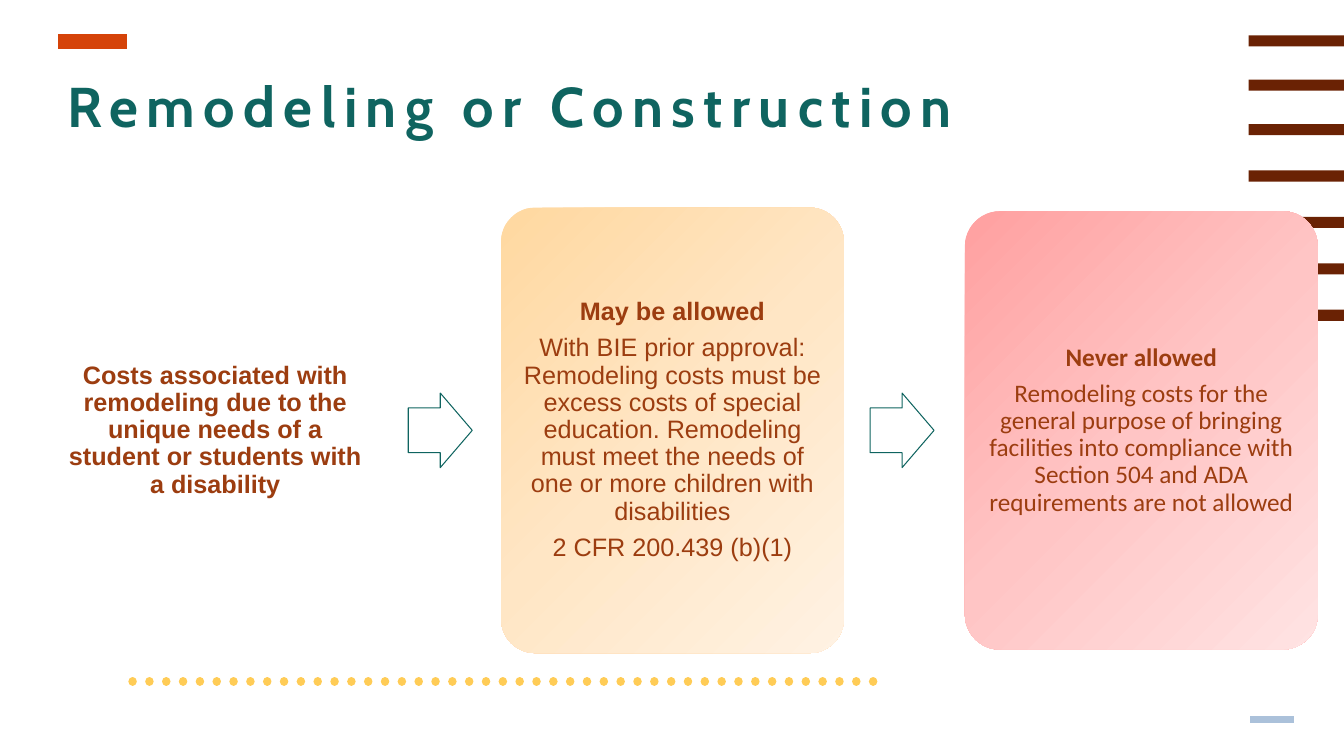
"""Build the Remodeling or Construction slide, with lengths in percent of the slide."""
import copy
from dataclasses import dataclass

import pptx
import pptx.dml.color
import pptx.enum.dml
import pptx.enum.shapes
import pptx.enum.text
import pptx.oxml.ns
import pptx.oxml.xmlchemy
import pptx.shapes.autoshape
import pptx.shapes.connector
import pptx.slide
import pptx.text.text
import pptx.util

RGBColor = pptx.dml.color.RGBColor
WHITE = RGBColor(0xFF, 0xFF, 0xFF)
TEAL = RGBColor(0x0F, 0x64, 0x60)
RUST = RGBColor(0x9C, 0x3D, 0x10)
MAROON = RGBColor(0x6A, 0x22, 0x04)
ORANGE = RGBColor(0xD5, 0x43, 0x09)
YELLOW = RGBColor(0xFF, 0xCC, 0x56)
BLUE = RGBColor(0xAB, 0xC1, 0xDA)
AMBER_SHADES = (RGBColor(0xFF, 0xD8, 0xA0), RGBColor(0xFF, 0xE6, 0xC5), RGBColor(0xFF, 0xF2, 0xE3))
PINK_SHADES = (RGBColor(0xFF, 0xA0, 0xA0), RGBColor(0xFF, 0xC5, 0xC5), RGBColor(0xFF, 0xE3, 0xE3))

SLIDE_WIDTH = pptx.util.Inches(13.33)
SLIDE_HEIGHT = pptx.util.Inches(7.5)
FLOW_MIDDLE = 56.93
STRIPE_COUNT = 7
SHAPES = pptx.enum.shapes.MSO_SHAPE


@dataclass(frozen=True)
class Card:
    left: float
    width: float
    height: float
    shades: tuple[RGBColor, ...]
    font: str
    heading: str
    details: tuple[str, ...] = ()


@dataclass(frozen=True)
class Rule:
    start: float
    end: float
    level: float
    color: RGBColor
    weight: float
    dotted: bool = False


CARDS = (
    Card(3.6, 24.83, 58.4, (WHITE,), "Arial",
         "Costs associated with remodeling due to the unique needs of a "
         "student or students with a disability"),
    Card(37.28, 25.51, 58.93, AMBER_SHADES, "Arial", "May be allowed",
         ("With BIE prior approval: Remodeling costs must be excess costs of special "
          "education. Remodeling must meet the needs of one or more children with disabilities",
          "2 CFR 200.439 (b)(1)")),
    Card(71.79, 26.26, 58, PINK_SHADES, "Calibri", "Never allowed",
         ("Remodeling costs for the general purpose of bringing facilities into compliance "
          "with Section 504 and ADA requirements are not allowed",)),
)
RULES = (
    Rule(64.97, 9.6, 90.13, YELLOW, 6, dotted=True),
    Rule(4.35, 9.45, 5.47, ORANGE, 11),
    Rule(93.02, 96.25, 95.2, BLUE, 5),
)
ARROW_LEFTS = (30.38, 64.74)


def across(percent: float) -> int:
    return round(SLIDE_WIDTH * percent / 100)


def down(percent: float) -> int:
    return round(SLIDE_HEIGHT * percent / 100)


def write(paragraph: pptx.text.text._Paragraph, text: str, *, font: str, size: float,
          color: RGBColor, bold: bool = False, line_spacing: float = 1.0,
          space_after: float = 0, centered: bool = False, tracking: int = 0) -> None:
    paragraph.line_spacing = line_spacing
    paragraph.space_after = pptx.util.Pt(space_after)
    align = pptx.enum.text.PP_ALIGN
    paragraph.alignment = align.CENTER if centered else align.LEFT
    run = paragraph.add_run()
    run.text = text
    run.font.name = font
    run.font.size = pptx.util.Pt(size)
    run.font.bold = bold
    run.font.color.rgb = color
    if tracking:
        run.font._element.set("spc", str(tracking * 100))


def paint(shape: pptx.shapes.autoshape.Shape, shades: tuple[RGBColor, ...]) -> None:
    if len(shades) == 1:
        shape.fill.solid()
        shape.fill.fore_color.rgb = shades[0]
        return
    shape.fill.gradient()
    shape.fill.gradient_angle = 315
    stop_list = shape._element.spPr.find(".//" + pptx.oxml.ns.qn("a:gsLst"))
    stop_list.insert(1, copy.deepcopy(stop_list[0]))
    for index, (stop, shade) in enumerate(zip(shape.fill.gradient_stops, shades)):
        stop.position = index / (len(shades) - 1)
        stop.color.rgb = shade


def add_block(slide: pptx.slide.Slide, preset: pptx.enum.shapes.MSO_SHAPE, left: float,
              top: float, width: float, height: float, shades: tuple[RGBColor, ...],
              ) -> pptx.shapes.autoshape.Shape:
    block = slide.shapes.add_shape(preset, across(left), down(top), across(width), down(height))
    block.shadow.inherit = False
    paint(block, shades)
    block.line.fill.background()
    return block


def add_rule(slide: pptx.slide.Slide, rule: Rule) -> None:
    line = slide.shapes.add_connector(
        pptx.enum.shapes.MSO_CONNECTOR.STRAIGHT,
        across(rule.start), down(rule.level), across(rule.end), down(rule.level))
    line.line.color.rgb = rule.color
    line.line.width = pptx.util.Pt(rule.weight)
    if rule.dotted:
        line.line.dash_style = pptx.enum.dml.MSO_LINE.ROUND_DOT
        line.line._get_or_add_ln().set("cap", "rnd")
    properties = line._element.spPr
    properties.append(properties.makeelement(pptx.oxml.ns.qn("a:effectLst"), {}))


def add_stripes(slide: pptx.slide.Slide) -> None:
    for index in range(STRIPE_COUNT):
        top = 4.67 + 5.87 * index + 0.27 * max(0, index - 2)
        add_block(slide, SHAPES.RECTANGLE, 92.91, top, 7.13, 1.47, (MAROON,))


def add_title(slide: pptx.slide.Slide) -> None:
    title = slide.shapes.add_textbox(across(4.28), down(8.4), across(91.52), down(10.4))
    title.text_frame.word_wrap = True
    write(title.text_frame.paragraphs[0], "Remodeling or Construction", font="Cabin",
          size=40, color=TEAL, bold=True, line_spacing=1.05, tracking=6)


def add_card(slide: pptx.slide.Slide, card: Card) -> None:
    panel = add_block(slide, SHAPES.ROUNDED_RECTANGLE, card.left,
                      FLOW_MIDDLE - card.height / 2, card.width, card.height, card.shades)
    panel.adjustments[0] = 0.1
    frame = panel.text_frame
    frame.word_wrap = True
    frame.vertical_anchor = pptx.enum.text.MSO_ANCHOR.MIDDLE
    inset = pptx.util.Inches(0.07)
    frame.margin_left = frame.margin_right = frame.margin_top = frame.margin_bottom = inset
    for index, text in enumerate((card.heading, *card.details)):
        paragraph = frame.add_paragraph() if index else frame.paragraphs[0]
        write(paragraph, text, font=card.font, size=18, color=RUST, bold=index == 0,
              line_spacing=0.9, space_after=6.3, centered=True)


def add_arrow(slide: pptx.slide.Slide, left: float) -> None:
    height = 9.87
    arrow = add_block(slide, SHAPES.RIGHT_ARROW, left, FLOW_MIDDLE - height / 2,
                      4.76, height, (WHITE,))
    arrow.adjustments[0] = 0.6
    arrow.adjustments[1] = 0.5
    arrow.line.color.rgb = TEAL
    arrow.line.width = pptx.util.Pt(0.75)


def main() -> None:
    deck = pptx.Presentation()
    deck.slide_width = SLIDE_WIDTH
    deck.slide_height = SLIDE_HEIGHT
    slide = deck.slides.add_slide(deck.slide_layouts[6])
    add_stripes(slide)
    for rule in RULES:
        add_rule(slide, rule)
    add_title(slide)
    for card in CARDS:
        add_card(slide, card)
    for left in ARROW_LEFTS:
        add_arrow(slide, left)
    deck.save("out.pptx")


if __name__ == "__main__":
    main()
